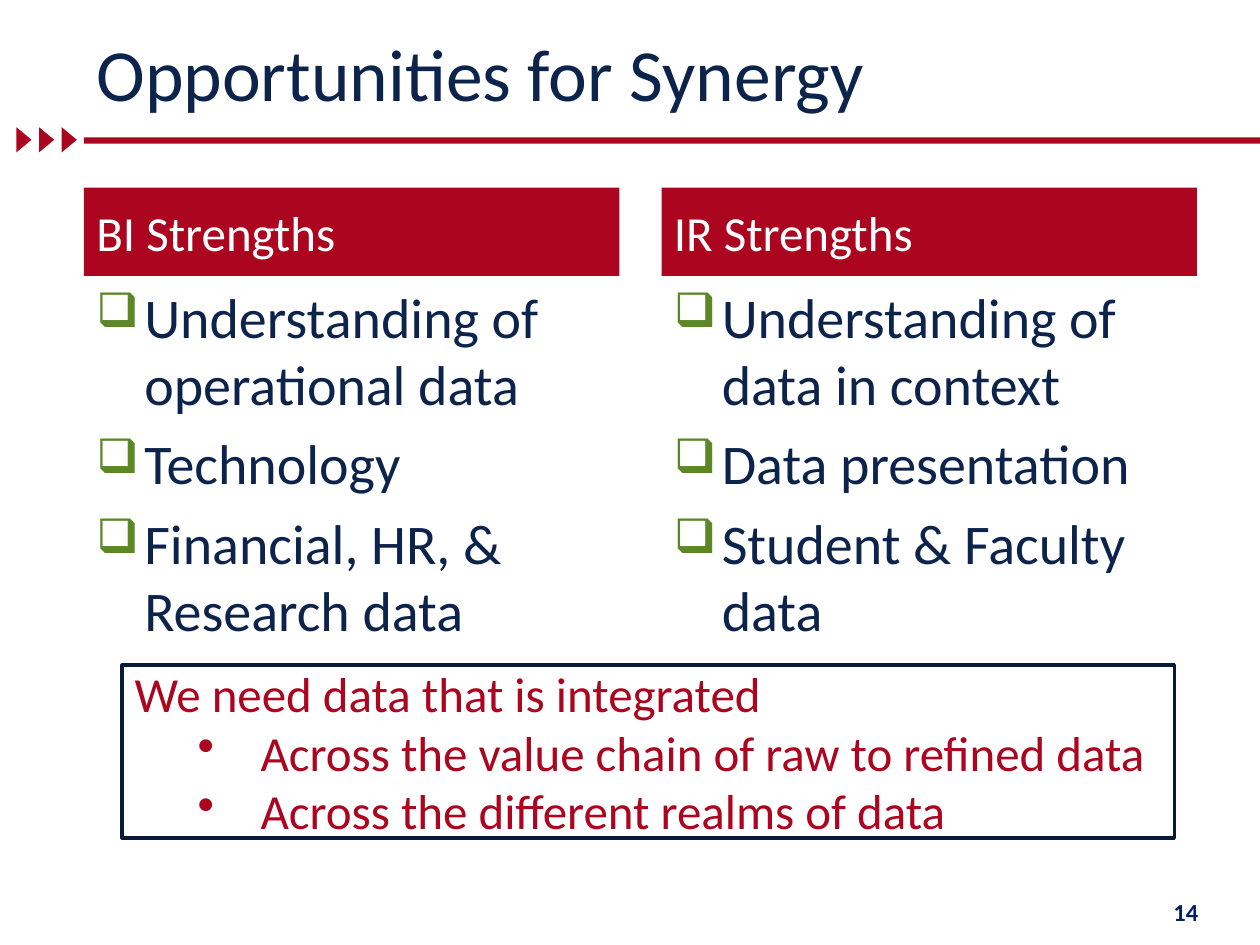
import lxml.etree
import pptx
import pptx.dml.color
import pptx.enum.shapes
import pptx.enum.text
import pptx.oxml.ns
import pptx.util

# The grid has 120 columns and 90 rows on a 10 by 7.5 inch page
CELL = pptx.util.Inches(1 / 12)
RED, NAVY, GREEN, WHITE = "AB0520", "0C234B", "5C8727", "FFFFFF"
MARGIN, COLUMN_WIDTH, COLUMN_STEP = 8, 51, 55
SHAPES = pptx.enum.shapes.MSO_SHAPE
ANCHOR = pptx.enum.text.MSO_ANCHOR
ALIGN = pptx.enum.text.PP_ALIGN


def color(value):
    return pptx.dml.color.RGBColor.from_string(value)


def place(box):
    """Turn a box of columns and rows into lengths."""
    return [round(cells * CELL) for cells in box]


def add_block(page, box, kind=SHAPES.RECTANGLE, fill=None, line=None):
    block = page.shapes.add_shape(kind, *place(box))
    block.shadow.inherit = False
    if fill:
        block.fill.solid()
        block.fill.fore_color.rgb = color(fill)
    else:
        block.fill.background()
    if line:
        block.line.color.rgb = color(line)
        block.line.width = pptx.util.Pt(2)
    else:
        block.line.fill.background()
    return block


def add_bullet(para, mark, left, hanging, tint=None, percent=100):
    properties = para._p.get_or_add_pPr()
    properties.set("marL", str(pptx.util.Inches(left)))
    properties.set("indent", str(-pptx.util.Inches(hanging)))

    def add(parent, tag, **attributes):
        name = pptx.oxml.ns.qn("a:" + tag)
        return lxml.etree.SubElement(parent, name, attributes)

    if tint:
        add(add(properties, "buClr"), "srgbClr", val=tint)
    add(properties, "buSzPct", val=str(percent * 1000))
    add(properties, "buChar", char=mark)


def write(shape, lines, size, tint, bold=False, align=ALIGN.LEFT,
          anchor=ANCHOR.MIDDLE, before=0, bullet=None, first_bullet=0):
    """Write one paragraph per line, with bullets from first_bullet on."""
    frame = shape.text_frame
    frame.word_wrap = True
    frame.vertical_anchor = anchor
    for index, line in enumerate(lines):
        para = frame.add_paragraph() if index else frame.paragraphs[0]
        para.alignment = align
        para.space_before = pptx.util.Pt(before)
        if bullet and index >= first_bullet:
            add_bullet(para, **bullet)
        span = para.add_run()
        span.text = line
        span.font.name = "Calibri"
        span.font.size = pptx.util.Pt(size)
        span.font.bold = bold
        span.font.color.rgb = color(tint)


def add_text(page, box, lines, **style):
    write(page.shapes.add_textbox(*place(box)), lines, **style)


def add_heading(page, box, title):
    left, top, width, height = box
    # Rule that runs to the right edge, with three arrowheads before it
    add_block(page, (left, 13.08, 120 - left, 0.6), fill=RED)
    for index in range(3):
        arrow = add_block(page, (1.08 + 2.16 * index, 12.6, 2.4, 1.44),
                          SHAPES.ISOSCELES_TRIANGLE, fill=RED)
        arrow.rotation = 90
    add_text(page, box, [title], size=42, tint=NAVY)


def add_strengths(page, box, header, items):
    left, top, width, height = box
    header_height = 8.4
    banner = add_block(page, (left, top, width, header_height), fill=RED)
    write(banner, [header], size=28, tint=WHITE, before=7)
    body = (left, top + header_height, width, height - header_height)
    add_text(page, body, items, size=32, tint=NAVY, anchor=ANCHOR.TOP, before=7,
             bullet=dict(mark="❑", left=0.38, hanging=0.38, tint=GREEN, percent=85))


def add_callout(page, box, lines):
    frame = add_block(page, box, line="091A37")
    write(frame, lines, size=28, tint=RED, first_bullet=1,
          bullet=dict(mark="•", left=1, hanging=0.5))


def main():
    deck = pptx.Presentation()
    deck.slide_width, deck.slide_height = 120 * CELL, 90 * CELL
    page = deck.slides.add_slide(deck.slide_layouts[6])

    add_heading(page, (MARGIN, 2.4, 106, 9), "Opportunities for Synergy")

    # Two columns of strengths
    strengths = {
        "BI Strengths": ["Understanding of operational data", "Technology",
                         "Financial, HR, & Research data"],
        "IR Strengths": ["Understanding of data in context", "Data presentation",
                         "Student & Faculty data"],
    }
    for index, (header, items) in enumerate(strengths.items()):
        box = (MARGIN + COLUMN_STEP * index, 17.88, COLUMN_WIDTH, 45)
        add_strengths(page, box, header, items)

    add_callout(page, (11.64, 63.36, 100.2, 16.44),
                ["We need data that is integrated",
                 "Across the value chain of raw to refined data",
                 "Across the different realms of data"])

    # Page number
    add_text(page, (109.44, 84.6, 7, 4.44), ["14"], size=14, tint="002060",
             bold=True, align=ALIGN.CENTER)

    deck.save("out.pptx")


if __name__ == "__main__":
    main()
